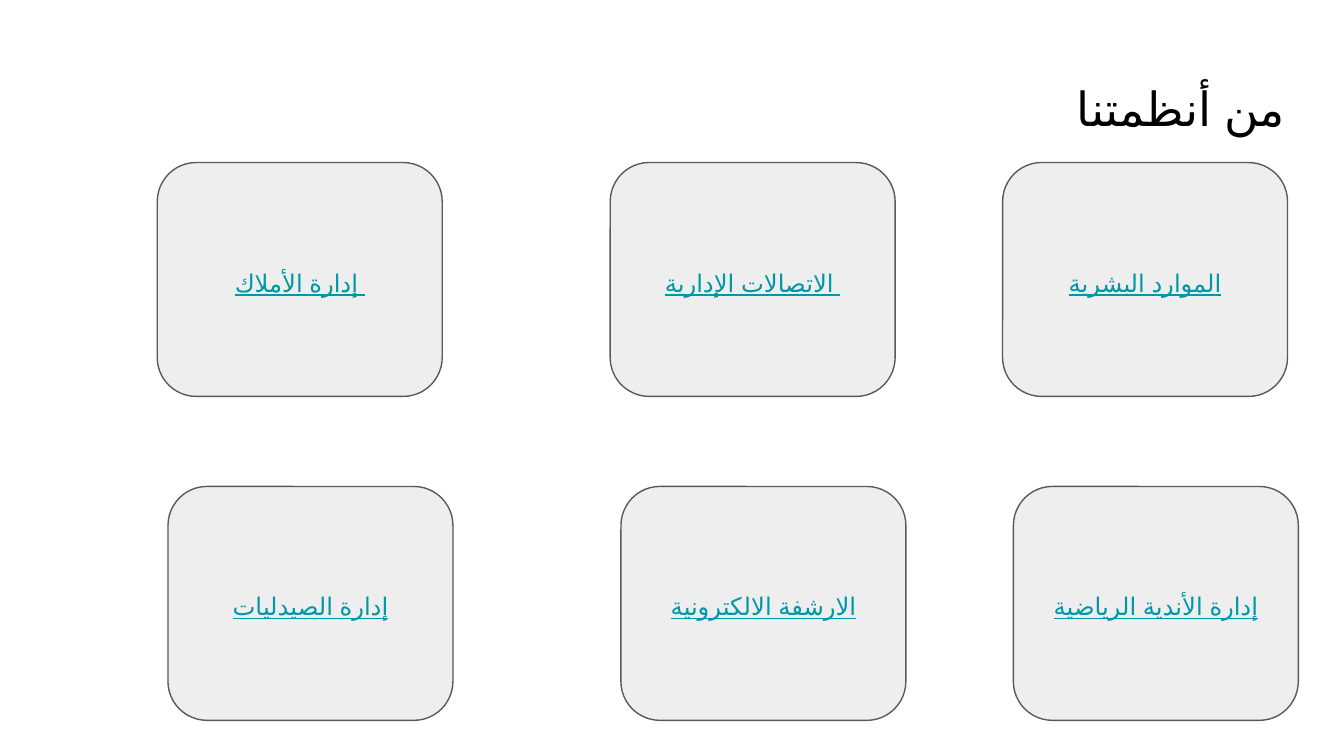
from lxml import etree
from pptx import Presentation
from pptx.dml.color import RGBColor
from pptx.enum.lang import MSO_LANGUAGE_ID
from pptx.enum.shapes import MSO_SHAPE
from pptx.enum.text import MSO_ANCHOR, PP_ALIGN
from pptx.oxml.ns import qn
from pptx.util import Inches, Pt

ROUNDED = MSO_SHAPE.ROUNDED_RECTANGLE
MIDDLE, TOP = MSO_ANCHOR.MIDDLE, MSO_ANCHOR.TOP
CENTER, RIGHT = PP_ALIGN.CENTER, PP_ALIGN.RIGHT
ARABIC = MSO_LANGUAGE_ID.ARABIC

TITLE = "من أنظمتنا"
SYSTEMS = [
    ["إدارة الأملاك ", "الاتصالات الإدارية ", "الموارد البشرية"],
    ["إدارة الصيدليات", "الارشفة الالكترونية", "إدارة الأندية الرياضية"],
]

COLORS = {"title": "000000", "card": "EEEEEE", "border": "595959", "label": "0097A7"}
FONT = "Arial"
SLIDE_WIDTH = 10
SLIDE_HEIGHT = SLIDE_WIDTH * 9 / 16
TITLE_BOX = (7.28, 0.49, 2.38, 0.63)
COLUMNS = (1.17, 4.54, 7.46)
FIRST_ROW, ROW_STEP, ROW_SHIFT = 1.21, 2.41, 0.08
CARD_WIDTH, CARD_HEIGHT = 2.12, 1.74
INSET = 0.1


def color(name):
    return RGBColor.from_string(COLORS[name])


def write(shape, text, size, color_name, alignment, anchor):
    frame = shape.text_frame
    frame.word_wrap = True
    frame.vertical_anchor = anchor
    frame.margin_left = frame.margin_right = Inches(INSET)
    frame.margin_top = frame.margin_bottom = Inches(INSET)
    paragraph = frame.paragraphs[0]
    paragraph.alignment = alignment
    paragraph.font.size = Pt(size)
    paragraph.font.color.rgb = color(color_name)
    paragraph.font.name = FONT
    run = paragraph.add_run()
    run.text = text
    run.font.language_id = ARABIC
    run.font.name = FONT
    etree.SubElement(run._r.rPr, qn("a:cs"), typeface=FONT)
    return paragraph


def add_title(slide):
    box = slide.shapes.add_textbox(*map(Inches, TITLE_BOX))
    paragraph = write(box, TITLE, 25.2, "title", RIGHT, TOP)
    paragraph._p.pPr.set("rtl", "1")


def add_card(slide, text, left, top):
    card = slide.shapes.add_shape(
        ROUNDED, *map(Inches, (left, top, CARD_WIDTH, CARD_HEIGHT))
    )
    card.shadow.inherit = False
    card.fill.solid()
    card.fill.fore_color.rgb = color("card")
    card.line.color.rgb = color("border")
    card.line.width = Pt(0.75)
    paragraph = write(card, text, 13, "label", CENTER, MIDDLE)
    paragraph.font.underline = True
    paragraph.line_spacing = 1.2
    paragraph.space_after = Pt(4)


def main():
    presentation = Presentation()
    presentation.slide_width = Inches(SLIDE_WIDTH)
    presentation.slide_height = Inches(SLIDE_HEIGHT)
    slide = presentation.slides.add_slide(presentation.slide_layouts[6])
    add_title(slide)
    for row, systems in enumerate(SYSTEMS):
        for left, text in zip(COLUMNS, systems):
            add_card(slide, text, left + row * ROW_SHIFT, FIRST_ROW + row * ROW_STEP)
    presentation.save("out.pptx")


if __name__ == "__main__":
    main()
